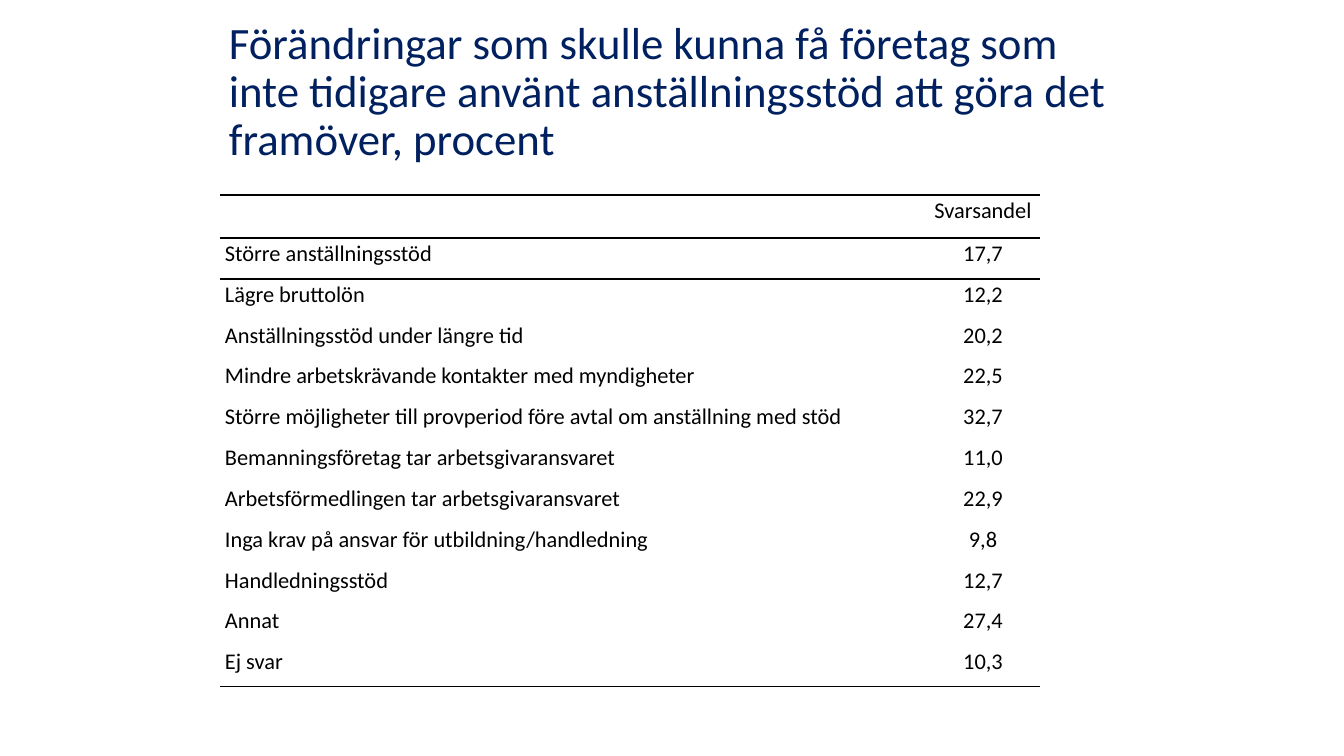
import pptx
import pptx.util
import pptx.dml.color
import pptx.enum.text
import pptx.oxml
import pptx.oxml.ns

TITLE = "Förändringar som skulle kunna få företag som inte tidigare använt anställningsstöd att göra det framöver, procent"
HEADER = ("", "Svarsandel")
ANSWERS = [
    ("Större anställningsstöd", "17,7"),
    ("Lägre bruttolön", "12,2"),
    ("Anställningsstöd under längre tid", "20,2"),
    ("Mindre arbetskrävande kontakter med myndigheter", "22,5"),
    ("Större möjligheter till provperiod före avtal om anställning med stöd", "32,7"),
    ("Bemanningsföretag tar arbetsgivaransvaret", "11,0"),
    ("Arbetsförmedlingen tar arbetsgivaransvaret", "22,9"),
    ("Inga krav på ansvar för utbildning/handledning", "9,8"),
    ("Handledningsstöd", "12,7"),
    ("Annat", "27,4"),
    ("Ej svar", "10,3"),
]

NAVY = pptx.dml.color.RGBColor(0x00, 0x20, 0x60)
BLACK = pptx.dml.color.RGBColor(0x00, 0x00, 0x00)
ALIGN = pptx.enum.text.PP_ALIGN
ANCHOR = pptx.enum.text.MSO_ANCHOR
NO_GRID_STYLE = "{2D5ABB26-0587-4C30-8999-92F81FD0307C}"

PX_PER_INCH = 100.8
SLIDE_SIZE = (1344, 756)
TITLE_BOX = (219, 30, 906, 126)
TABLE_LEFT, TABLE_TOP = 220, 195
COLUMN_WIDTHS = (706, 114)
HEADER_HEIGHT, BODY_HEIGHT = 43, 449
CELL_INSET = 5


def px(length):
    return pptx.util.Inches(length / PX_PER_INCH)


def set_values(target, values):
    for name, value in values.items():
        setattr(target, name, value)


def write(frame, text, size, color, alignment, spacing):
    para = frame.paragraphs[0]
    set_values(para, {"alignment": alignment, "line_spacing": spacing})
    set_values(para.font, {"size": pptx.util.Pt(size), "name": "Calibri"})
    if text:
        span = para.add_run()
        span.text = text
        set_values(span.font, {"size": pptx.util.Pt(size), "name": "Calibri"})
        span.font.color.rgb = color


def add_border(cell, tag):
    properties = cell._tc.get_or_add_tcPr()
    properties.append(pptx.oxml.parse_xml(
        f'<a:{tag} {pptx.oxml.ns.nsdecls("a")} w="{pptx.util.Pt(1)}">'
        f'<a:solidFill><a:srgbClr val="{BLACK}"/></a:solidFill></a:{tag}>'))


def add_title(page):
    box = page.shapes.add_textbox(*map(px, TITLE_BOX))
    set_values(box.text_frame, {"word_wrap": True, "vertical_anchor": ANCHOR.MIDDLE})
    write(box.text_frame, TITLE, 32, NAVY, ALIGN.LEFT, 0.9)


def add_answers(page):
    rows = [HEADER] + ANSWERS
    last = len(rows) - 1
    frame = page.shapes.add_table(
        len(rows), len(HEADER), px(TABLE_LEFT), px(TABLE_TOP),
        px(sum(COLUMN_WIDTHS)), px(HEADER_HEIGHT + BODY_HEIGHT))
    table = frame.table
    set_values(table, {"first_row": False, "horz_banding": False})
    for style in frame.element.iter(pptx.oxml.ns.qn("a:tableStyleId")):
        style.text = NO_GRID_STYLE
    for column, width in zip(table.columns, COLUMN_WIDTHS):
        column.width = px(width)
    edges = [round(BODY_HEIGHT * index / last) for index in range(last + 1)]
    heights = [HEADER_HEIGHT] + [end - start for start, end in zip(edges, edges[1:])]
    for row_index, (texts, height) in enumerate(zip(rows, heights)):
        table.rows[row_index].height = px(height)
        for column_index, text in enumerate(texts):
            cell = table.cell(row_index, column_index)
            set_values(cell, {
                "margin_left": px(CELL_INSET), "margin_right": px(CELL_INSET),
                "margin_top": 0, "margin_bottom": 0, "vertical_anchor": ANCHOR.TOP})
            alignment = ALIGN.CENTER if column_index else ALIGN.LEFT
            write(cell.text_frame, text, 16, BLACK, alignment, 1.07)
            if row_index in (0, 1):
                add_border(cell, "lnT")
            if row_index in (0, last):
                add_border(cell, "lnB")
            cell.fill.background()


def main():
    deck = pptx.Presentation()
    deck.slide_width, deck.slide_height = map(px, SLIDE_SIZE)
    page = deck.slides.add_slide(deck.slide_layouts[6])
    add_title(page)
    add_answers(page)
    deck.save("out.pptx")


if __name__ == "__main__":
    main()
